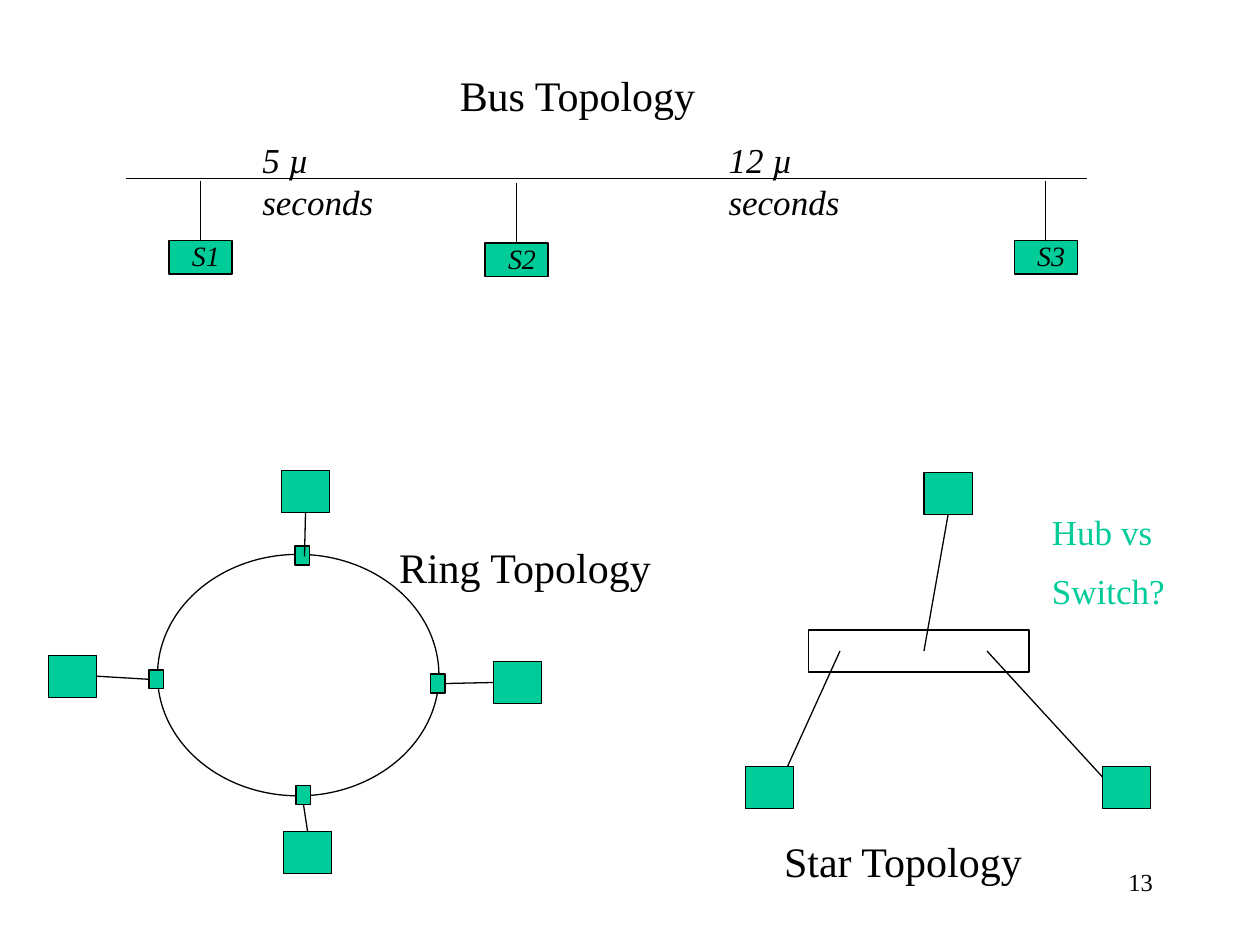
from pptx import Presentation
from pptx.dml.color import RGBColor
from pptx.enum.shapes import MSO_CONNECTOR, MSO_SHAPE
from pptx.enum.text import MSO_ANCHOR, MSO_AUTO_SIZE, PP_ALIGN
from pptx.util import Inches, Pt
from lxml.etree import SubElement
from pptx.oxml.ns import qn

BLACK, GREEN = "000000", "00CC99"
TOP, LEFT, BOTTOM, RIGHT = range(4)


def tint(code):
    return RGBColor.from_string(code)


class Board:
    COLS, ROWS = 120, 90
    FONT = "Times New Roman"

    def __init__(self, deck):
        self.deck = deck
        self.slide = deck.slides.add_slide(deck.slide_layouts[5])
        self.shapes = self.slide.shapes

    def x(self, cols):
        return round(self.deck.slide_width * cols / self.COLS)

    def y(self, rows):
        return round(self.deck.slide_height * rows / self.ROWS)

    def place(self, col, row, wide, high):
        return self.x(col), self.y(row), self.x(wide), self.y(high)

    def shape(self, col, row, wide, high, fill=None, kind=MSO_SHAPE.RECTANGLE):
        item = self.shapes.add_shape(kind, *self.place(col, row, wide, high))
        item.shadow.inherit = False
        if fill:
            item.fill.solid()
            item.fill.fore_color.rgb = tint(fill)
        else:
            item.fill.background()
        item.line.color.rgb = tint(BLACK)
        item.line.width = Pt(0.75)
        return item

    def host(self, col, row):
        return self.shape(col, row, 4.6, 4, GREEN)

    def line(self, start, end, first=None, last=None):
        item = self.shapes.add_connector(
            MSO_CONNECTOR.STRAIGHT, self.x(start[0]), self.y(start[1]),
            self.x(end[0]), self.y(end[1]))
        item.line.color.rgb = tint(BLACK)
        item.line.width = Pt(0.75)
        SubElement(item._element.spPr, qn("a:effectLst"))
        if first:
            item.begin_connect(*first)
        if last:
            item.end_connect(*last)

    def style(self, item, text, size, color=BLACK, italic=False, align=PP_ALIGN.LEFT):
        frame = item.text_frame
        frame.text = text
        frame.word_wrap = True
        frame.auto_size = MSO_AUTO_SIZE.NONE
        frame.vertical_anchor = MSO_ANCHOR.TOP
        for rank, para in enumerate(frame.paragraphs):
            para.alignment = align
            para.space_before = Pt(size / 2 if rank else 0)
            for run in para.runs:
                run.font.name = self.FONT
                run.font.size = Pt(size)
                run.font.italic = italic
                run.font.color.rgb = tint(color)

    def text(self, col, row, wide, high, text, size, **look):
        box = self.shapes.add_textbox(*self.place(col, row, wide, high))
        self.style(box, text, size, **look)

    def title(self, col, row, wide, high, text):
        item = self.shapes.title
        item.left, item.top, item.width, item.height = self.place(col, row, wide, high)
        self.style(item, text, 24, align=PP_ALIGN.CENTER)

    def label(self, col, row, text):
        self.text(col, row, 36, 6, text, 24, align=PP_ALIGN.CENTER)


def bus(board):
    board.title(37, 6, 36, 6, "Bus Topology")
    board.line((12, 17), (103.5, 17))
    stops = [("S1", 16.1, 22.9), ("S2", 46.2, 23.15), ("S3", 96.6, 22.9)]
    for name, col, row in stops:
        box = board.shape(col, row, 6, 3.2, GREEN)
        board.line((col + 3, row - 5.7), (col + 3, row), last=(box, TOP))
        board.text(col + 1, row - 0.75, 5.6, 4.4, name, 16, italic=True)
    for col, delay in [(23.8, "5 µ seconds"), (68.2, "12 µ seconds")]:
        board.text(col, 12.6, 17.2, 9.2, delay, 20, italic=True)


def ring(board):
    board.shape(15, 52.8, 26.8, 23, kind=MSO_SHAPE.OVAL)
    spots = [
        ((41, 64.2), (47, 63), RIGHT, LEFT),
        ((28.2, 74.8), (27, 79.2), BOTTOM, TOP),
        ((14.2, 63.8), (4.6, 62.4), LEFT, RIGHT),
        ((28.1, 52), (26.8, 44.8), None, BOTTOM),
    ]
    for tap, far, near, side in spots:
        node = board.shape(*tap, 1.4, 1.8, GREEN)
        host = board.host(*far)
        first = (node, near) if near is not None else None
        board.line((29, 53), far, first, (host, side))
    board.label(32, 51, "Ring Topology")


def star(board):
    head = board.host(88, 45)
    board.host(71, 73)
    board.host(105, 73)
    board.shape(77, 60, 21, 4)
    board.line((90, 49), (88, 62), first=(head, BOTTOM))
    board.line((75, 73), (80, 62))
    board.line((105, 74), (94, 62))
    board.label(68, 79, "Star Topology")
    board.text(99, 48, 16, 11.2, "Hub vs\nSwitch?", 20, color=GREEN)


def main():
    deck = Presentation()
    deck.slide_width, deck.slide_height = Inches(10), Inches(7.5)
    board = Board(deck)
    bus(board)
    ring(board)
    star(board)
    board.text(86, 82, 25, 6, "13", 14, align=PP_ALIGN.RIGHT)
    deck.save("out.pptx")


if __name__ == "__main__":
    main()
